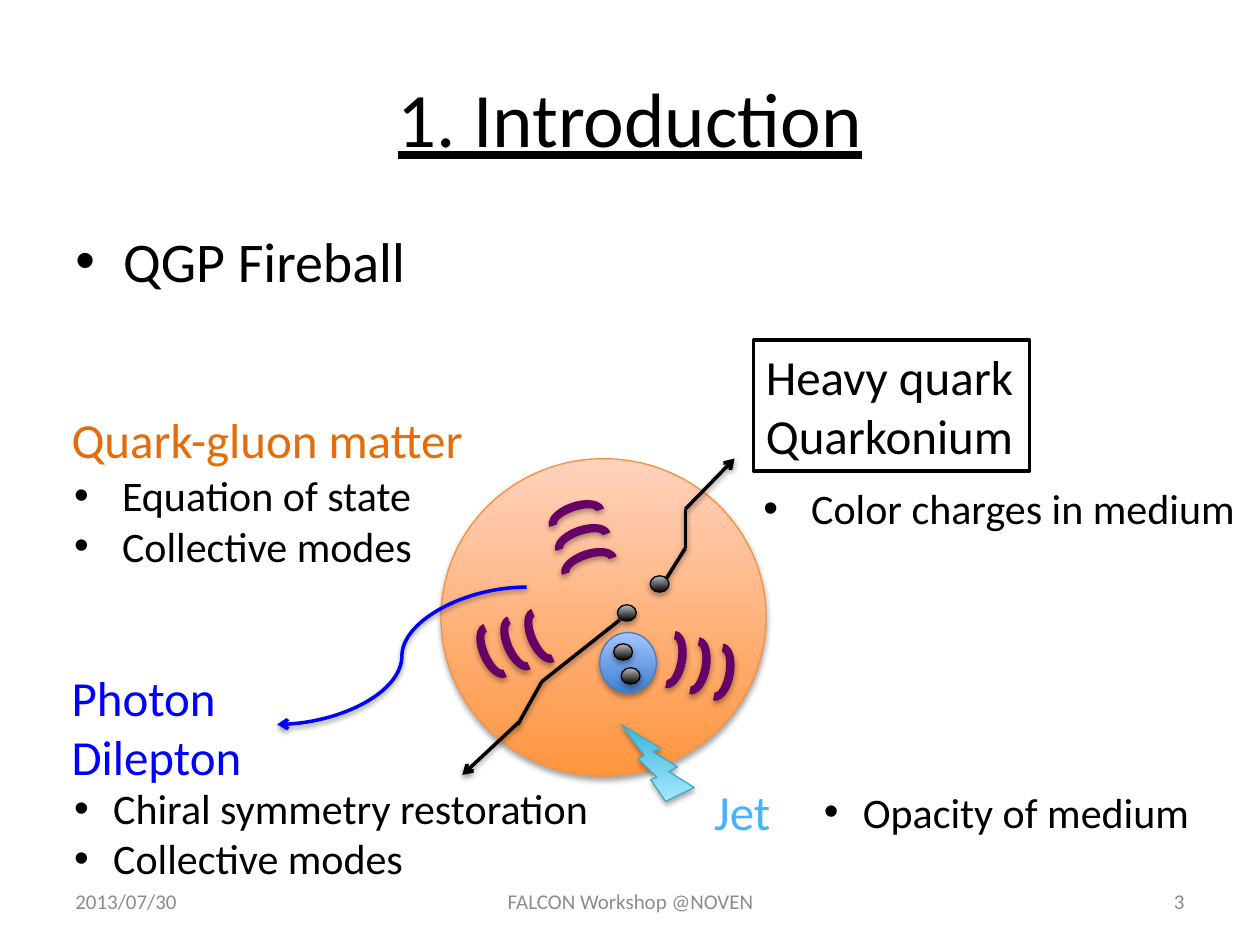
from lxml.etree import SubElement
from pptx import Presentation
from pptx.dml.color import RGBColor
from pptx.enum.shapes import MSO_CONNECTOR, MSO_SHAPE
from pptx.enum.text import MSO_ANCHOR, MSO_AUTO_SIZE, PP_ALIGN
from pptx.oxml.ns import qn
from pptx.util import Inches, Pt


def add_shadow(effects, distance, opacity):
    shadow = SubElement(effects, qn("a:outerShdw"), blurRad="40000", dist=str(distance),
                        dir="5400000", rotWithShape="0")
    black = SubElement(shadow, qn("a:srgbClr"), val="000000")
    SubElement(black, qn("a:alpha"), val=str(opacity))


def write_lines(shape, lines, size, color, indent=0, align=PP_ALIGN.LEFT):
    frame = shape.text_frame
    for index, line in enumerate(lines):
        paragraph = frame.paragraphs[0] if index == 0 else frame.add_paragraph()
        paragraph.alignment = align
        if indent:
            properties = paragraph._p.get_or_add_pPr()
            properties.set("marL", str(Inches(indent)))
            properties.set("indent", str(-Inches(indent)))
            SubElement(properties, qn("a:buFont"), typeface="Arial")
            SubElement(properties, qn("a:buChar"), char="•")
        run = paragraph.add_run()
        run.text = line
        run.font.size = Pt(size)
        run.font.name = "Calibri"
        run.font.color.rgb = RGBColor.from_string(color)
    return frame


presentation = Presentation()
presentation.slide_width = Inches(10)
presentation.slide_height = Inches(7.5)
slide = presentation.slides.add_slide(presentation.slide_layouts[6])
shapes = slide.shapes

title = shapes.add_textbox(Inches(0.5), Inches(0.3), Inches(9), Inches(1.25))
title_frame = write_lines(title, ["1. Introduction"], 44, "000000", align=PP_ALIGN.CENTER)
title_frame.word_wrap = True
title_frame.vertical_anchor = MSO_ANCHOR.MIDDLE
title_frame.paragraphs[0].runs[0].font.underline = True

topic = shapes.add_textbox(Inches(0.5), Inches(1.75), Inches(9), Inches(4.95))
topic_frame = write_lines(topic, ["QGP Fireball"], 32, "000000", 0.38)
topic_frame.word_wrap = True
topic_frame.paragraphs[0].space_before = Pt(6.4)

for left, width, words, align in [
    (0.5, 2.33, "2013/07/30", PP_ALIGN.LEFT),
    (3.42, 3.17, "FALCON Workshop @NOVEN", PP_ALIGN.CENTER),
    (7.17, 2.33, "3", PP_ALIGN.RIGHT),
]:
    footer = shapes.add_textbox(Inches(left), Inches(6.95), Inches(width), Inches(0.4))
    footer_frame = write_lines(footer, [words], 12, "8C8C8C", align=align)
    footer_frame.word_wrap = True
    footer_frame.vertical_anchor = MSO_ANCHOR.MIDDLE

quark = ("000000", "BDBDBD", "000000")
bodies = [
    (MSO_SHAPE.OVAL, 3.5, 3.64, 2.58, 2.52, 0, ("FF953E", "FFD2BD", "F69240")),
    (MSO_SHAPE.OVAL, 4.76, 5.02, 0.45, 0.48, 0, ("3F80CE", "A4C4FF", "4B7EBC")),
    (MSO_SHAPE.LIGHTNING_BOLT, 4.93, 5.75, 0.58, 0.61, 180, ("39B7D8", "A7E6FF", "46AAC5")),
]
for left, top in [(4.9, 4.8), (5.16, 4.57), (4.93, 5.3), (4.87, 5.11)]:
    bodies.append((MSO_SHAPE.OVAL, left, top, 0.15, 0.13, 0, quark))
for left, top, step_x, step_y, angle in [
    (5.1, 5.12, 0.19, 0.05, 100.2),
    (3.7, 5.05, 0.19, -0.06, 246.3),
    (4.35, 3.99, 0.05, 0.19, 341.5),
]:
    for wave in range(3):
        bodies.append((MSO_SHAPE.BLOCK_ARC, left + wave * step_x, top + wave * step_y,
                       0.45, 0.23, angle, ("660066", "660066", "660066")))

for kind, left, top, width, height, angle, (bottom, upper, outline) in bodies:
    body = shapes.add_shape(kind, Inches(left), Inches(top), Inches(width), Inches(height))
    body.rotation = angle
    if bottom == upper:
        body.fill.solid()
        body.fill.fore_color.rgb = RGBColor.from_string(bottom)
    else:
        body.fill.gradient()
        body.fill.gradient_angle = 90
        for stop, color in zip(body.fill.gradient_stops, (bottom, upper)):
            stop.color.rgb = RGBColor.from_string(color)
    body.line.color.rgb = RGBColor.from_string(outline)
    body.line.width = Pt(0.75)
    body.shadow.inherit = False
    add_shadow(body._element.spPr.find(qn("a:effectLst")), 23000, 35000)

straight, curve = MSO_CONNECTOR.STRAIGHT, MSO_CONNECTOR.CURVE
for kind, start, end, color, arrow in [
    (straight, (5.29, 4.59), (5.44, 4.35), "000000", None),
    (straight, (5.44, 4.35), (5.44, 4.04), "000000", None),
    (straight, (5.44, 4.04), (5.83, 3.64), "000000", "a:tailEnd"),
    (straight, (3.67, 6.15), (4.12, 5.73), "000000", "a:headEnd"),
    (straight, (4.11, 5.75), (4.3, 5.41), "000000", None),
    (straight, (4.3, 5.41), (4.92, 4.92), "000000", None),
    (curve, (2.2, 5.75), (4.18, 4.66), "0000FF", "a:headEnd"),
]:
    track = shapes.add_connector(kind, *map(Inches, start + end))
    track.line.color.rgb = RGBColor.from_string(color)
    track.line.width = Pt(2)
    if arrow:
        SubElement(track.line._get_or_add_ln(), qn(arrow), type="arrow")
    add_shadow(SubElement(track._element.spPr, qn("a:effectLst")), 20000, 38000)

for left, top, width, height, lines, size, color, indent, fill, outline in [
    (0.47, 5.25, 1.57, 1.04, ["Photon", "Dilepton"], 28, "0000FF", 0, None, None),
    (5.98, 2.7, 2.19, 1.04, ["Heavy quark", "Quarkonium"], 28, "000000", 0, "FFFFFF", "000000"),
    (0.47, 3.2, 3.36, 0.57, ["Quark-gluon matter"], 28, "E46C0A", 0, None, None),
    (5.57, 6.15, 0.65, 0.57, ["Jet"], 28, "47B2FF", 0, None, None),
    (0.49, 3.68, 2.91, 0.91, ["Equation of state", "Collective modes"], 24, "000000", 0.38,
     None, None),
    (5.96, 3.78, 3.96, 0.5, ["Color charges in medium"], 24, "000000", 0.38, "FFFFFF", None),
    (6.44, 6.19, 3.12, 0.5, ["Opacity of medium"], 24, "000000", 0.31, None, None),
    (0.49, 6.16, 4.34, 0.91, ["Chiral symmetry restoration", "Collective modes"], 24, "000000",
     0.31, None, None),
]:
    label = shapes.add_textbox(Inches(left), Inches(top), Inches(width), Inches(height))
    label_frame = write_lines(label, lines, size, color, indent)
    label_frame.word_wrap = False
    label_frame.auto_size = MSO_AUTO_SIZE.SHAPE_TO_FIT_TEXT
    if fill:
        label.fill.solid()
        label.fill.fore_color.rgb = RGBColor.from_string(fill)
    if outline:
        label.line.color.rgb = RGBColor.from_string(outline)
        label.line.width = Pt(2)

presentation.save("out.pptx")
